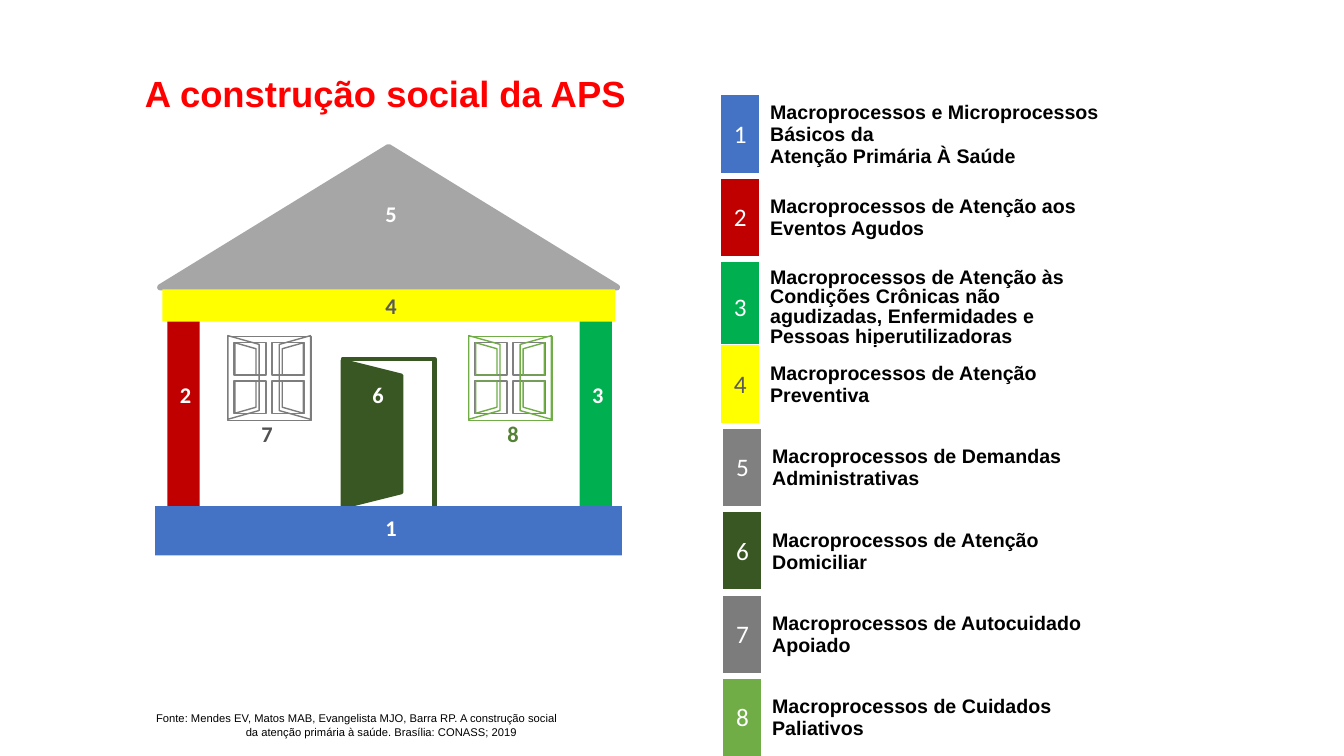
from dataclasses import dataclass
from itertools import product
from typing import Any

from lxml import etree
from pptx import Presentation
from pptx import util as u
from pptx.dml import color as dc
from pptx.enum import shapes as sh, text as tx
from pptx.oxml import ns

CELL = u.Inches(0.1)  # the slide is a grid of 133.3 columns by 75 rows


@dataclass(frozen=True)
class Theme:
    white: str = "FFFFFF"
    black: str = "000000"
    title: str = "FF0000"
    blue: str = "4472C4"
    red: str = "C00000"
    green: str = "00B050"
    yellow: str = "FFFF00"
    roof: str = "A6A6A6"
    gray: str = "808080"
    steel: str = "7C7C7C"
    forest: str = "385723"
    leaf: str = "70AD47"
    dark: str = "595959"
    slate: str = "525252"
    moss: str = "548235"
    sans: str = "Arial"
    digit: str = "Calibri"
    head_pt: int = 26
    key_pt: int = 18
    mark_pt: int = 16
    item_pt: int = 14
    note_pt: int = 8


T = Theme()
MID = tx.MSO_ANCHOR.MIDDLE
MARGINS = ("margin_left", "margin_top", "margin_right", "margin_bottom")


@dataclass(frozen=True)
class Part:
    col: float
    row: float
    wide: float
    high: float
    fill: str | None = None
    line: str | None = None
    pt: float = 0
    kind: Any = sh.MSO_SHAPE.RECTANGLE
    turn: int = 0
    slope: float | None = None


@dataclass(frozen=True)
class Mark:
    col: float
    row: float
    num: str
    ink: str = T.white


@dataclass(frozen=True)
class Item:
    text: str
    fill: str
    wide: float
    ink: str = T.white
    high: float = 7.9
    lead: float = 1.0


def grid(n: float) -> int:
    return round(n * CELL)


def apply(obj: Any, vals: dict[str, Any]) -> None:
    for name, val in vals.items():
        setattr(obj, name, val)


def style(para: Any, face: str, size: int, ink: str, bold: bool = False, **form: Any) -> None:
    apply(para, form)
    apply(para.font, {"name": face, "size": u.Pt(size), "bold": bold})
    para.font.color.rgb = dc.RGBColor.from_string(ink)


def paint(shape: Any, fill: str | None, line: str | None, pt: float) -> None:
    shape.shadow.inherit = False
    if fill:
        shape.fill.solid()
        shape.fill.fore_color.rgb = dc.RGBColor.from_string(fill)
    else:
        shape.fill.background()
    if line:
        shape.line.color.rgb = dc.RGBColor.from_string(line)
        shape.line.width = u.Pt(pt)
    else:
        shape.line.fill.background()


def draw(slide: Any, part: Part) -> None:
    shape = slide.shapes.add_shape(part.kind, *map(grid, (part.col, part.row, part.wide, part.high)))
    shape.rotation = part.turn
    if part.slope is not None:
        shape.adjustments[0] = part.slope
    paint(shape, part.fill, part.line, part.pt)


def window(slide: Any, col: float, row: float, ink: str) -> None:
    size, span = 8.3, 8.2
    # Panes
    for x, y in product((0.6, 4.4), repeat=2):
        draw(slide, Part(col + x, row + y, 3.2, 3.2, line=T.gray, pt=1))
    # Frame and shutters
    draw(slide, Part(col, row, size, size, line=ink, pt=1))
    for x, turn in ((-2.6, 90), (2.5, 270)):
        draw(slide, Part(col + x, row + 2.5, size, 3.1, line=ink, pt=1,
                         kind=sh.MSO_SHAPE.TRAPEZOID, turn=turn, slope=0.28))
    # Shutter panels, mirrored into the four corners
    panel = ((2.8, 1.2), (0.7, 0.6), (0.7, 3.8), (2.8, 3.8))
    for right, low in product((False, True), repeat=2):
        dots = [(grid(col + (span - x if right else x)), grid(row + (span - y if low else y)))
                for x, y in panel]
        pen = slide.shapes.build_freeform(*dots[0])
        pen.add_line_segments(dots[1:], close=True)
        paint(pen.convert_to_shape(), None, ink, 1)


def write(slide: Any, box: tuple[float, ...], words: list[str], inset: float = 1, **form: Any) -> Any:
    frame = slide.shapes.add_textbox(*map(grid, box)).text_frame
    frame.word_wrap = True
    frame.text = "\n".join(words)
    apply(frame, {"margin_left": grid(inset), "margin_right": grid(inset)})
    for para in frame.paragraphs:
        style(para, **form)
    return frame


def border(cell: Any) -> None:
    props = cell._tc.get_or_add_tcPr()
    for side, pt in (("L", 1), ("R", 1), ("T", 1), ("B", 3)):
        line = etree.SubElement(props, ns.qn(f"a:ln{side}"), w=str(u.Pt(pt)))
        fill = etree.SubElement(line, ns.qn("a:solidFill"))
        etree.SubElement(fill, ns.qn("a:srgbClr"), val=T.white)


def legend(slide: Any, num: int, item: Item) -> None:
    col = 71.5 if num <= 4 else 71.7
    row, key = 9.4 + 8.27 * (num - 1), 3.9
    box = map(grid, (col, row, key + item.wide, item.high))
    table = slide.shapes.add_table(1, 2, *box).table
    apply(table, {"first_row": False, "horz_banding": False})
    looks = (
        (key, str(num), (0.4, 0.4, 0.4, 0.4),
         {"face": T.digit, "size": T.key_pt, "ink": item.ink, "alignment": tx.PP_ALIGN.CENTER}),
        (item.wide, item.text, (1, 0.4, 0, 0.4),
         {"face": T.sans, "size": T.item_pt, "ink": T.black, "bold": True, "line_spacing": item.lead}),
    )
    for i, (wide, words, pads, form) in enumerate(looks):
        table.columns[i].width = grid(wide)
        cell = table.cell(0, i)
        cell.text = words
        apply(cell, {"vertical_anchor": MID, **dict(zip(MARGINS, map(grid, pads)))})
        for para in cell.text_frame.paragraphs:
            style(para, **form)
        border(cell)
        cell.fill.background()
    face = table.cell(0, 0).fill
    face.solid()
    face.fore_color.rgb = dc.RGBColor.from_string(item.fill)


HOUSE = (
    Part(15.9, 14.6, 45.3, 13.9, T.roof, T.roof, 4.5, sh.MSO_SHAPE.ISOSCELES_TRIANGLE),
    Part(34, 35.6, 9.1, 14.9, line=T.forest, pt=3),
    Part(29.6, 40.1, 14.6, 5.9, T.forest, T.forest, 2.25, sh.MSO_SHAPE.TRAPEZOID, 90, 0.25),
    Part(15.4, 50.2, 46.3, 4.9, T.blue),
    Part(16.6, 29, 3.2, 21.2, T.red),
    Part(57.5, 29, 3.2, 21.2, T.green),
    Part(16.1, 28.7, 44.9, 3.2, T.yellow),
)
MARKS = (
    Mark(37.4, 50.3, "1"), Mark(17, 37.1, "2"), Mark(57.9, 37.1, "3"),
    Mark(37.4, 28.2, "4", T.dark), Mark(37.4, 19.1, "5"), Mark(36.1, 37.1, "6"),
    Mark(25.1, 40.9, "7", T.slate), Mark(49.5, 40.9, "8", T.moss),
)
ITEMS = (
    Item("Macroprocessos e Microprocessos Básicos da\nAtenção Primária À Saúde", T.blue, 34.1),
    Item("Macroprocessos de Atenção aos Eventos Agudos", T.red, 34.4),
    Item("Macroprocessos de Atenção às Condições Crônicas não agudizadas, "
         "Enfermidades e Pessoas hiperutilizadoras", T.green, 34.2, high=9.2, lead=0.9),
    Item("Macroprocessos de Atenção Preventiva", T.yellow, 34.5, T.dark),
    Item("Macroprocessos de Demandas Administrativas", T.gray, 33.3),
    Item("Macroprocessos de Atenção Domiciliar", T.forest, 33.7),
    Item("Macroprocessos de Autocuidado Apoiado", T.steel, 34.2),
    Item("Macroprocessos de Cuidados Paliativos", T.leaf, 33.9),
)
SOURCE = [
    "Fonte: Mendes EV, Matos MAB, Evangelista MJO, Barra RP. A construção social",
    "da atenção primária à saúde. Brasília: CONASS; 2019",
]


def main() -> None:
    deck = Presentation()
    apply(deck, {"slide_width": grid(133.33), "slide_height": grid(75)})
    slide = deck.slides.add_slide(deck.slide_layouts[6])

    # House with its windows
    for part in HOUSE:
        draw(slide, part)
    for col, ink in ((22.6, T.steel), (46.5, T.leaf)):
        window(slide, col, 33.4, ink)
    for mark in MARKS:
        frame = write(slide, (mark.col, mark.row, 2.8, 4.5), [mark.num], 0, face=T.digit,
                      size=T.mark_pt, ink=mark.ink, bold=True,
                      alignment=tx.PP_ALIGN.CENTER, line_spacing=0.9)
        frame.vertical_anchor = MID

    # Numbered legend
    for num, item in enumerate(ITEMS, 1):
        legend(slide, num, item)

    # Title and source
    write(slide, (13.4, 6.6, 56, 5.3), ["A construção social da APS"],
          face=T.sans, size=T.head_pt, ink=T.title, bold=True)
    note = write(slide, (14.5, 70.1, 55.6, 3.6), SOURCE,
                 face=T.sans, size=T.note_pt, ink=T.black)
    note.paragraphs[1]._p.get_or_add_pPr().set("marL", str(grid(8.9)))

    deck.save("out.pptx")


if __name__ == "__main__":
    main()
